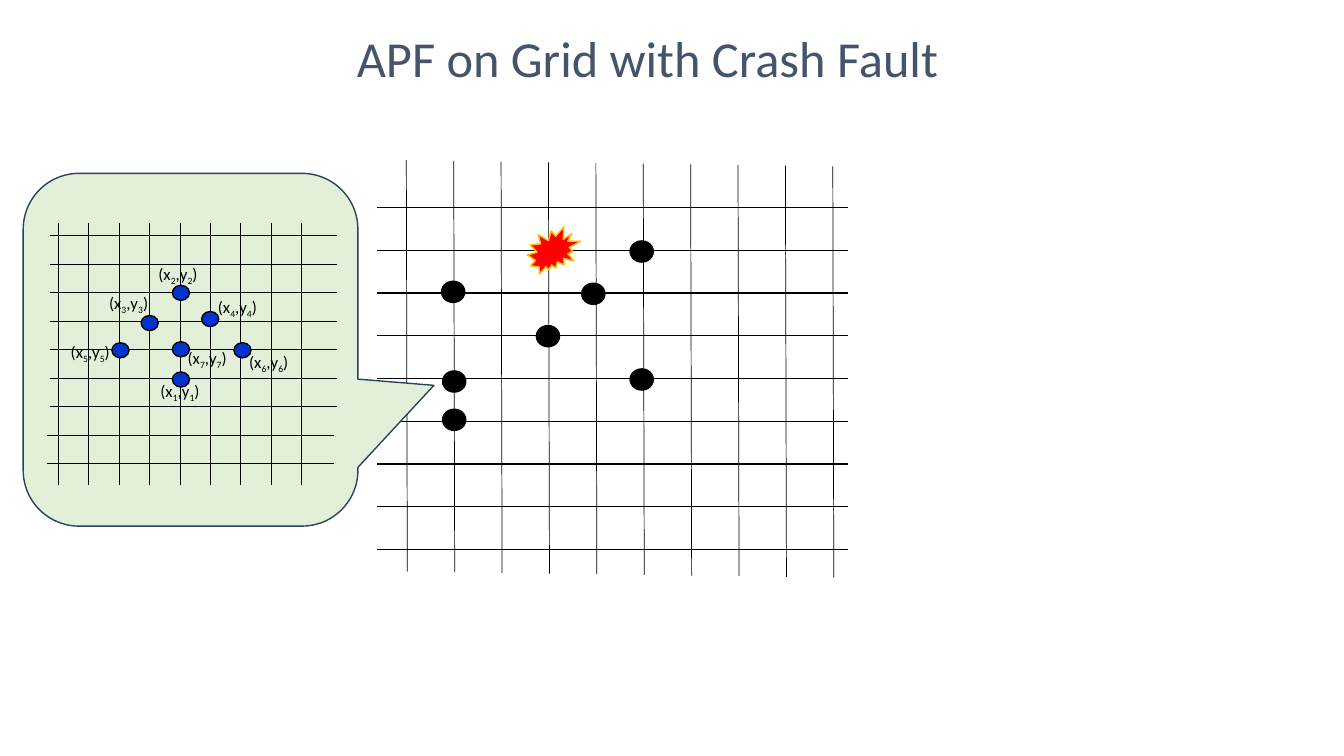
from pptx import Presentation
from pptx.dml.color import RGBColor
from pptx.enum.shapes import MSO_CONNECTOR, MSO_SHAPE
from pptx.enum.text import MSO_ANCHOR, PP_ALIGN
from pptx.oxml.ns import qn
from pptx.util import Inches, Pt
from lxml import etree

LINE = MSO_CONNECTOR.STRAIGHT
OVAL = MSO_SHAPE.OVAL
CALLOUT = MSO_SHAPE.ROUNDED_RECTANGULAR_CALLOUT
BURST = MSO_SHAPE.EXPLOSION2
CENTER = PP_ALIGN.CENTER
MIDDLE = MSO_ANCHOR.MIDDLE

COLORS = {
    "title": "44546A", "black": "000000", "target": "0033CC",
    "callout": "E2F0D9", "callout_edge": "28445D",
    "crash": "FF0000", "crash_edge": "FFC000",
}

ROBOT_SIZE = (0.23, 0.21)
ROBOTS = [(4.38, 2.79), (6.25, 2.39), (5.32, 3.23), (5.77, 2.81),
          (6.25, 3.66), (4.39, 3.68), (4.39, 4.06)]
TARGET_SIZE = (0.17, 0.15)
LABEL_SIZE = (0.85, 0.24)
# index: (target position, label position)
TARGETS = {
    "1": ((1.71, 3.69), (1.36, 3.77)),
    "2": ((1.71, 2.83), (1.34, 2.61)),
    "3": ((1.40, 3.13), (0.85, 2.90)),
    "4": ((2.00, 3.09), (1.93, 2.94)),
    "5": ((1.11, 3.40), (0.47, 3.38)),
    "6": ((2.32, 3.40), (2.24, 3.48)),
    "7": ((1.71, 3.39), (1.63, 3.44)),
}


def spread(first, last, count):
    """Evenly spaced values from first to last."""
    return [first + (last - first) * i / (count - 1) for i in range(count)]


class Canvas:
    """Draws on one slide in one style."""

    font = "Calibri"

    def __init__(self, slide):
        self.shapes = slide.shapes

    def color(self, name):
        return RGBColor.from_string(COLORS[name])

    def line(self, x1, y1, x2, y2, width):
        c = self.shapes.add_connector(
            LINE, Inches(x1), Inches(y1), Inches(x2), Inches(y2))
        c.line.color.rgb = self.color("black")
        c.line.width = Pt(width)
        etree.SubElement(c._element.spPr, qn("a:effectLst"))

    def shape(self, kind, pos, size, fill, edge="black"):
        sp = self.shapes.add_shape(kind, *map(Inches, pos + size))
        sp.shadow.inherit = False
        sp.fill.solid()
        sp.fill.fore_color.rgb = self.color(fill)
        sp.line.color.rgb = self.color(edge)
        sp.line.width = Pt(1)
        return sp

    def text(self, pos, size, parts, points, color="black"):
        """Centred text; every second part is a subscript."""
        tf = self.shapes.add_textbox(*map(Inches, pos + size)).text_frame
        tf.word_wrap = True
        tf.vertical_anchor = MIDDLE
        tf.margin_top = tf.margin_bottom = 0
        p = tf.paragraphs[0]
        p.alignment = CENTER
        p.font.name = self.font
        p.font.size = Pt(points)
        p.font.color.rgb = self.color(color)
        for i, part in enumerate(parts):
            r = p.add_run()
            r.text = part
            if i % 2:
                r.font._element.set("baseline", "-25000")


def draw_robot_grid(canvas):
    for y in spread(2.06, 5.45, 9):
        canvas.line(3.74, y, 8.41, y, 1)
    for x, top in zip(spread(4.03, 8.26, 10), spread(1.59, 1.65, 10)):
        canvas.line(x, top, x + 0.01, top + 4.08, 0.5)
    for pos in ROBOTS:
        canvas.shape(OVAL, pos, ROBOT_SIZE, "black")


def draw_target_pattern(canvas):
    sp = canvas.shape(CALLOUT, (0.23, 1.72), (3.32, 3.5),
                      "callout", "callout_edge")
    for i, value in enumerate((0.727, 0.101, 0.167)):
        sp.adjustments[i] = value
    for i, x in enumerate(spread(0.58, 2.99, 9)):
        canvas.line(x, 2.21, x, 4.81, 0.5 if i else 1)
    for i, y in enumerate(spread(2.34, 4.6, 9)):
        left = 0.5 if i < 7 else 0.47
        canvas.line(left, y, left + 2.84, y, 0.75 if i < 8 else 1)
    for pos, _ in TARGETS.values():
        canvas.shape(OVAL, pos, TARGET_SIZE, "target")
    for n, (_, pos) in TARGETS.items():
        canvas.text(pos, LABEL_SIZE, ["(x", n, ",y", n, ")"], 12)


def main():
    prs = Presentation()
    prs.slide_width, prs.slide_height = Inches(13.33), Inches(7.5)
    canvas = Canvas(prs.slides.add_slide(prs.slide_layouts[6]))
    canvas.text((1.06, 0.26), (10.84, 0.62),
                ["APF on Grid with Crash Fault "], 36, "title")
    draw_robot_grid(canvas)
    draw_target_pattern(canvas)
    canvas.shape(BURST, (5.23, 2.25), (0.53, 0.47), "crash", "crash_edge")
    prs.save("out.pptx")


if __name__ == "__main__":
    main()
